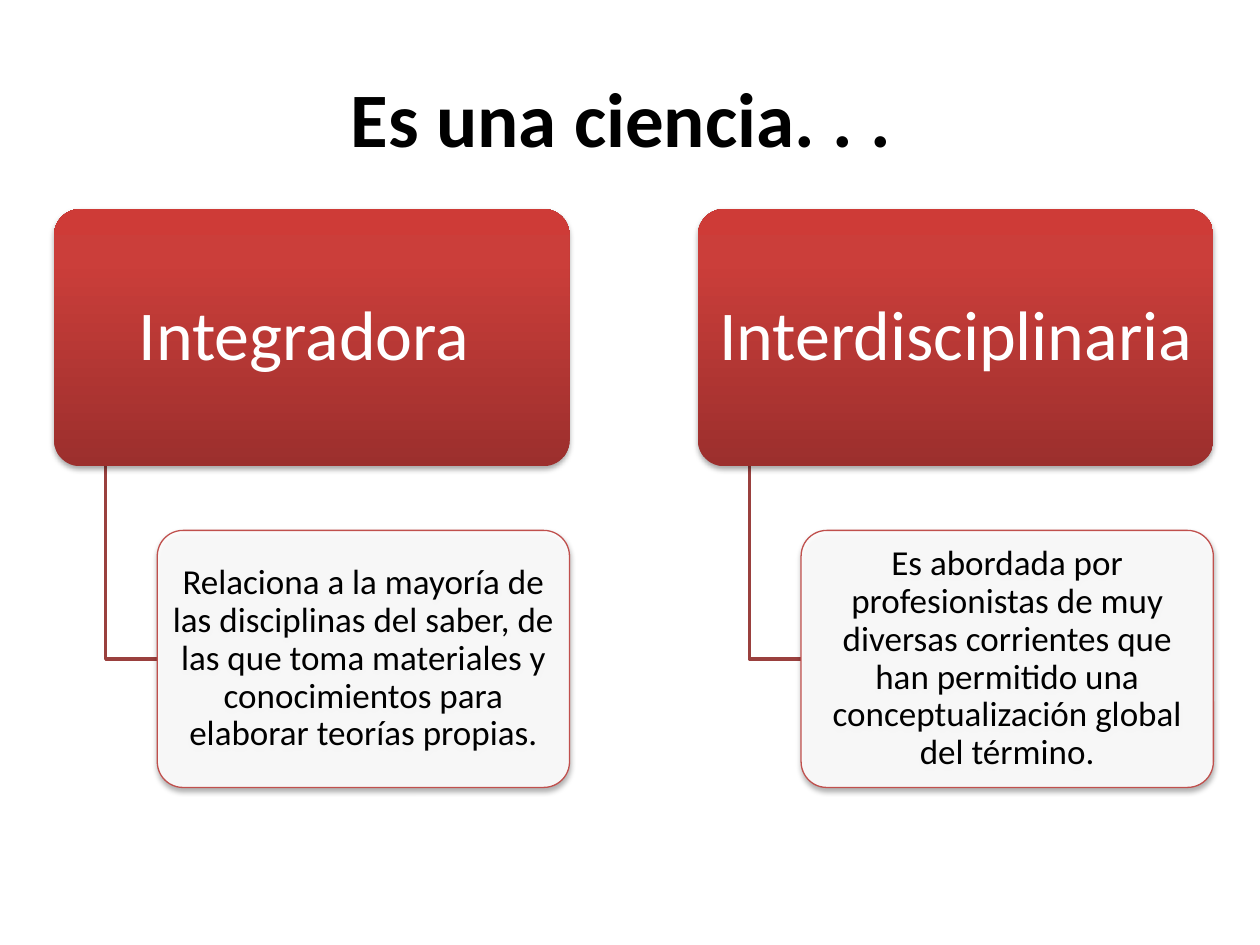
import pptx
import pptx.util
import pptx.dml.color
import pptx.enum.shapes
import pptx.enum.text
import pptx.oxml
import pptx.oxml.ns

Inches, Pt = pptx.util.Inches, pptx.util.Pt
NS = pptx.oxml.ns.nsdecls("a")

prs = pptx.Presentation()
prs.slide_width, prs.slide_height = Inches(10), Inches(7.5)
s = prs.slides.add_slide(prs.slide_layouts[6])


def rgb(color):
    return pptx.dml.color.RGBColor.from_string(color)


def write(sp, text, size, color, inset_x, inset_y, bold=False):
    """Put one centred run in the middle of a shape."""
    tf = sp.text_frame
    tf.word_wrap = True
    tf.vertical_anchor = pptx.enum.text.MSO_ANCHOR.MIDDLE
    tf.margin_left = tf.margin_right = Inches(inset_x)
    tf.margin_top = tf.margin_bottom = Inches(inset_y)
    p = tf.paragraphs[0]
    p.alignment = pptx.enum.text.PP_ALIGN.CENTER
    p.line_spacing = 1.0 if bold else 0.9
    r = p.add_run()
    r.text = text
    r.font.name, r.font.size, r.font.bold = "Calibri", Pt(size), bold
    r.font.color.rgb = rgb(color)


shadow = (f'<a:effectLst {NS}><a:outerShdw blurRad="{Pt(3.1)}" dist="{Pt(1.8)}" dir="5400000" '
          'rotWithShape="0"><a:srgbClr val="000000"><a:alpha val="35000"/></a:srgbClr>'
          '</a:outerShdw></a:effectLst>')
stops = "".join(f'<a:gs pos="{pos}000"><a:srgbClr val="{color}"/></a:gs>'
                for pos, color in ((0, "9C2F2D"), (80, "CB3E3A"), (100, "CE3B37")))
gradient = (f'<a:gradFill {NS} rotWithShape="1"><a:gsLst>{stops}</a:gsLst>'
            '<a:lin ang="16200000" scaled="0"/></a:gradFill>')

# Each branch: a heading box, and a detail box indented by a fifth of its width
left, pitch, top = 0.43, 5.11, 1.66
box_w, box_h = 4.09, 2.04
indent, row = box_w / 5, box_h * 1.25
branches = [
    ("Integradora ",
     "Relaciona a la mayoría de las disciplinas del saber, de las que toma materiales y "
     "conocimientos para elaborar teorías propias."),
    ("Interdisciplinaria ",
     "Es abordada por profesionistas de muy diversas corrientes que han permitido una "
     "conceptualización global del término."),
]

for i, (heading, detail) in enumerate(branches):
    x = left + i * pitch
    elbow_x, elbow_y = x + indent / 2, top + row + box_h / 2
    fb = s.shapes.build_freeform(Inches(elbow_x), Inches(top + box_h))
    fb.add_line_segments([(Inches(elbow_x), Inches(elbow_y)),
                          (Inches(x + indent), Inches(elbow_y))], close=False)
    link = fb.convert_to_shape()
    link.shadow.inherit = False
    link.fill.background()
    link.line.color.rgb, link.line.width = rgb("9A403E"), Pt(2)

    boxes = []
    for dx, dy in ((0, 0), (indent, row)):
        sp = s.shapes.add_shape(pptx.enum.shapes.MSO_SHAPE.ROUNDED_RECTANGLE, Inches(x + dx),
                                Inches(top + dy), Inches(box_w - dx), Inches(box_h))
        sp.adjustments[0] = 0.1
        boxes.append(sp)
    head, body = boxes

    head.line.fill.background()
    head._element.spPr.find(pptx.oxml.ns.qn("a:prstGeom")).addnext(pptx.oxml.parse_xml(gradient))
    write(head, heading, 40, "FFFFFF", 0.08, 0.06)

    body.fill.solid()
    body.fill.fore_color.rgb = rgb("FFFFFF")
    white = body._element.spPr.find(".//" + pptx.oxml.ns.qn("a:srgbClr"))
    white.append(pptx.oxml.parse_xml(f'<a:alpha {NS} val="90000"/>'))
    body.line.color.rgb, body.line.width = rgb("C0504D"), Pt(0.75)
    write(body, detail, 20, "000000", 0.04, 0.03)

    for sp in boxes:
        sp._element.spPr.append(pptx.oxml.parse_xml(shadow))

title = s.shapes.add_textbox(Inches(0.5), Inches(0.3), Inches(9), Inches(1.25))
write(title, "Es una ciencia. . . ", 44, "000000", 0.1, 0.05, bold=True)

prs.save("out.pptx")
